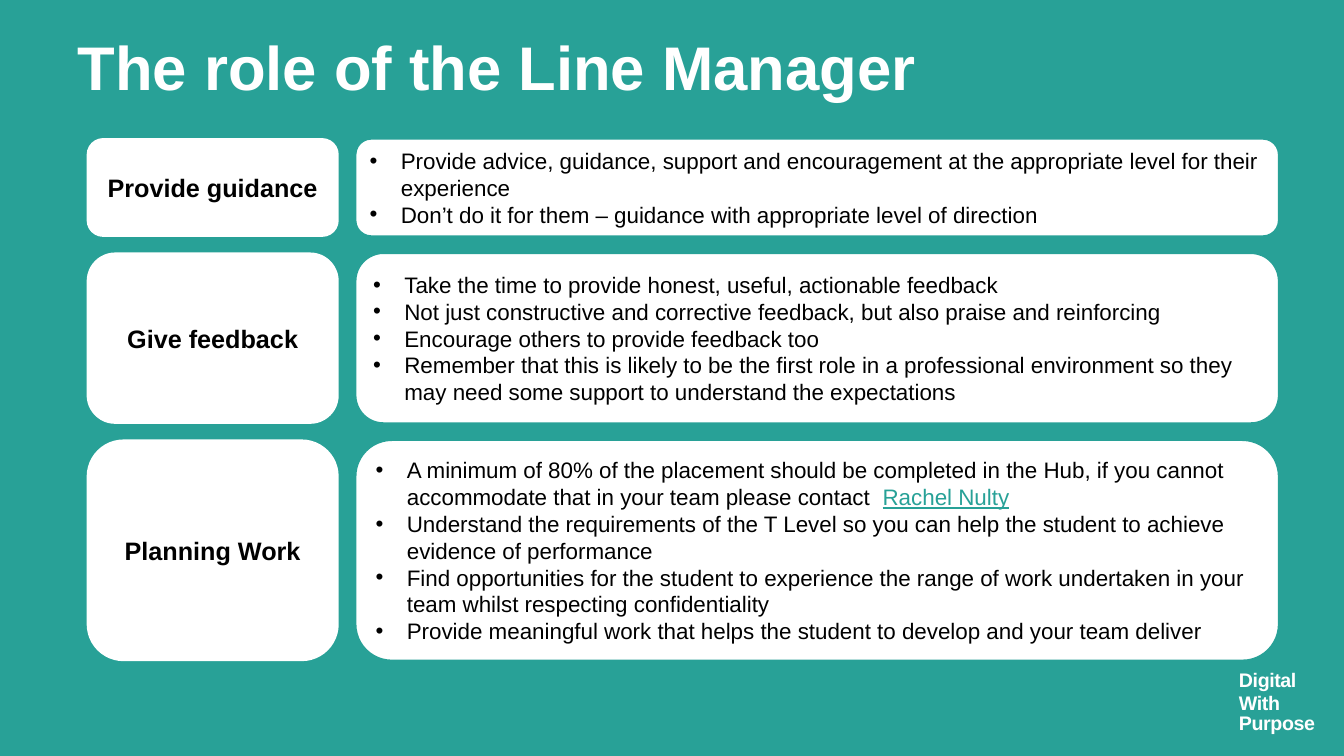
from pptx import Presentation
from pptx.dml.color import RGBColor
from pptx.enum.shapes import MSO_SHAPE
from pptx.enum.text import MSO_ANCHOR, PP_ALIGN
from pptx.oxml.ns import qn
from pptx.util import Inches, Pt
from lxml.etree import SubElement

TEAL = RGBColor(0x28, 0xA1, 0x97)
LINK = RGBColor(0x27, 0xA1, 0x97)
WHITE = RGBColor(0xFF, 0xFF, 0xFF)
BLACK = RGBColor(0, 0, 0)

LABEL_LEFT, LABEL_WIDTH = 0.86, 2.5
DETAIL_LEFT, DETAIL_WIDTH = 3.52, 9.17
FIRST_TOP, GAP = 1.37, 0.155

CONTACT = "Rachel Nulty"
ROLES = [
    ("Provide guidance", 0.98, [
        "Provide advice, guidance, support and encouragement at the appropriate level for their experience",
        "Don’t do it for them – guidance with appropriate level of direction",
    ]),
    ("Give feedback", 1.7, [
        "Take the time to provide honest, useful, actionable feedback",
        "Not just constructive and corrective feedback, but also praise and reinforcing",
        "Encourage others to provide feedback too",
        "Remember that this is likely to be the first role in a professional environment "
        "so they may need some support to understand the expectations",
    ]),
    ("Planning Work", 2.2, [
        "A minimum of 80% of the placement should be completed in the Hub, "
        "if you cannot accommodate that in your team please contact  " + CONTACT,
        "Understand the requirements of the T Level so you can help the student "
        "to achieve evidence of performance",
        "Find opportunities for the student to experience the range of work undertaken "
        "in your team whilst respecting confidentiality",
        "Provide meaningful work that helps the student to develop and your team deliver",
    ]),
]
TAGLINE = [("Digital", 16), ("With", 16), ("Purpose", 14.4)]


def add_text(p, text, size=16, color=BLACK, bold=False, underline=False, spacing=None):
    r = p.add_run()
    r.text = text
    font = r.font
    font.name = "Arial"
    font.size = Pt(size)
    font.bold = bold
    font.underline = underline
    font.color.rgb = color
    if spacing is not None:
        r._r.get_or_add_rPr().set("spc", str(int(spacing * 100)))


def get_paragraph(tf, index):
    return tf.paragraphs[0] if index == 0 else tf.add_paragraph()


def set_bullet(p):
    pPr = p._p.get_or_add_pPr()
    pPr.set("marL", str(Inches(0.31)))
    pPr.set("indent", str(Inches(-0.31)))
    SubElement(pPr, qn("a:buFont")).set("typeface", "Arial")
    SubElement(pPr, qn("a:buChar")).set("char", "•")


def add_card(s, left, top, width, height):
    sp = s.shapes.add_shape(MSO_SHAPE.ROUNDED_RECTANGLE, Inches(left), Inches(top),
                            Inches(width), Inches(height))
    sp.shadow.inherit = False
    sp.fill.solid()
    sp.fill.fore_color.rgb = WHITE
    sp.line.fill.background()
    tf = sp.text_frame
    tf.word_wrap = True
    tf.vertical_anchor = MSO_ANCHOR.MIDDLE
    return sp


def add_label(s, text, top, height):
    sp = add_card(s, LABEL_LEFT, top, LABEL_WIDTH, height)
    p = sp.text_frame.paragraphs[0]
    p.alignment = PP_ALIGN.CENTER
    add_text(p, text, size=18, bold=True)


def add_details(s, points, top, height):
    sp = add_card(s, DETAIL_LEFT, top, DETAIL_WIDTH, height)
    sp.line.color.rgb = TEAL
    sp.line.width = Pt(2.25)
    for i, point in enumerate(points):
        p = get_paragraph(sp.text_frame, i)
        p.alignment = PP_ALIGN.LEFT
        set_bullet(p)
        body, contact, _ = point.partition(CONTACT)
        add_text(p, body)
        if contact:
            add_text(p, contact, color=LINK, underline=True)


def add_title(s, text):
    title = s.shapes.title
    title.left, title.top = Inches(0.67), Inches(0.24)
    title.width, title.height = Inches(8.93), Inches(0.84)
    tf = title.text_frame
    tf.word_wrap = True
    tf.vertical_anchor = MSO_ANCHOR.TOP
    p = tf.paragraphs[0]
    p.alignment = PP_ALIGN.LEFT
    add_text(p, text, size=44, color=WHITE, bold=True)


def add_tagline(s):
    box = s.shapes.add_textbox(Inches(12.19), Inches(6.59), Inches(0.96), Inches(0.75))
    tf = box.text_frame
    tf.word_wrap = False
    for i, (word, leading) in enumerate(TAGLINE):
        p = get_paragraph(tf, i)
        p.line_spacing = Pt(leading)
        add_text(p, word, size=14, color=WHITE, bold=True, spacing=-0.3)


def main():
    prs = Presentation()
    prs.slide_width, prs.slide_height = Inches(13.33), Inches(7.5)
    s = prs.slides.add_slide(prs.slide_layouts[5])
    s.background.fill.solid()
    s.background.fill.fore_color.rgb = TEAL
    add_tagline(s)
    add_title(s, "The role of the Line Manager")
    top = FIRST_TOP
    for name, height, points in ROLES:
        add_label(s, name, top, height)
        add_details(s, points, top, height)
        top += height + GAP
    prs.save("out.pptx")


if __name__ == "__main__":
    main()
